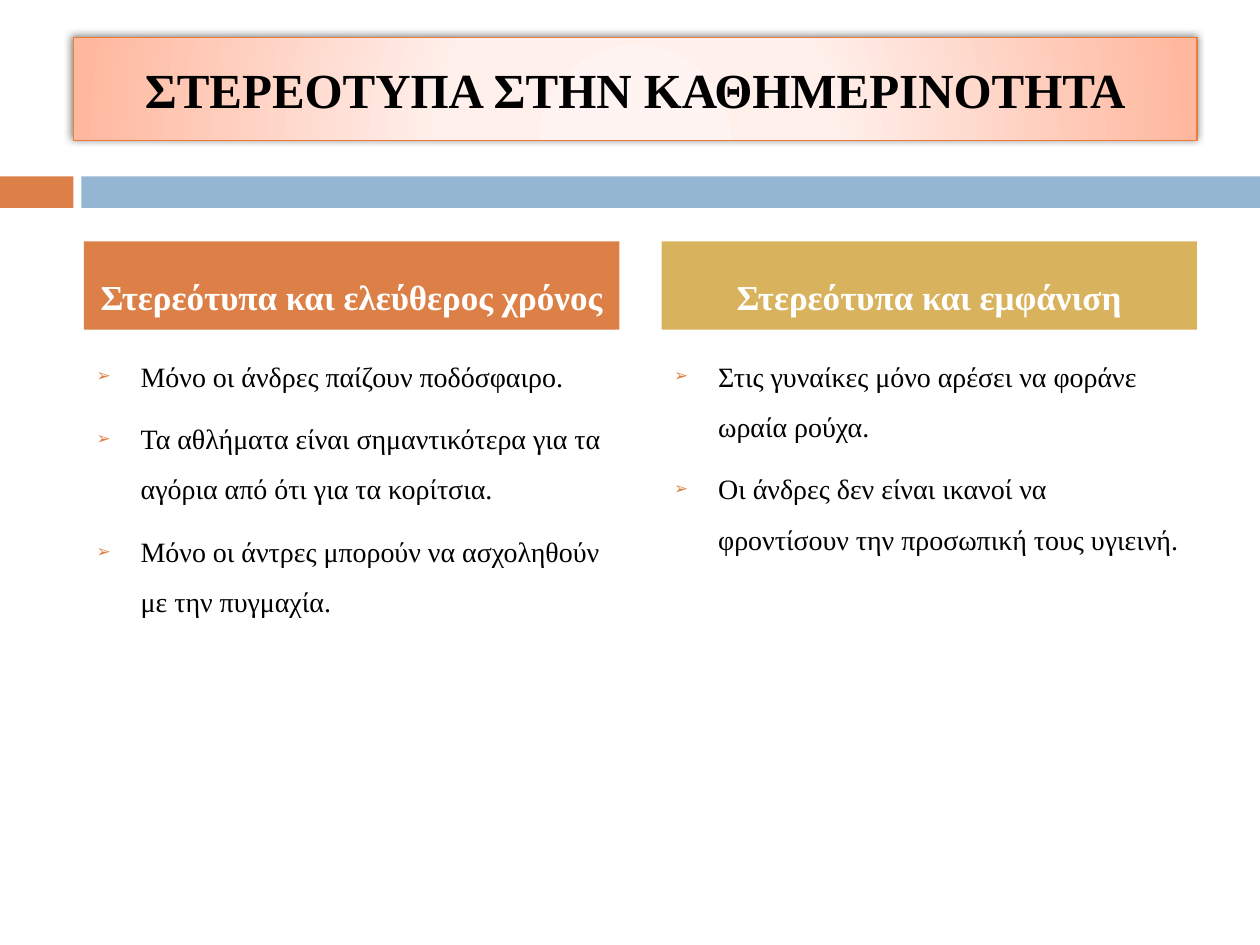
from lxml import etree as et
from pptx import Presentation
from pptx import util as u
from pptx.dml import color as c
from pptx.enum import shapes, text
from pptx.oxml import ns

Pt = u.Pt
hues = {
    "rust": "DD8047", "blue": "94B6D2", "gold": "D8B25C", "edge": "EC7C38",
    "pale": "FFF4F1", "blush": "FFF0EC", "peach": "FFB79D",
    "black": "000000", "white": "FFFFFF",
}


def add(node, xml):
    start, rest = xml.split(" ", 1)
    node.append(et.fromstring(f'{start} xmlns:a="{ns.nsdecls("a").split(chr(34))[1]}" {rest}'))


def write(para, words, size, hue, bold=False):
    run = para.add_run()
    run.text = words
    font = run.font
    font.name, font.size, font.bold = "Times New Roman", Pt(size), bold
    font.color.rgb = c.RGBColor.from_string(hues[hue])


deck = Presentation()
deck.slide_width, deck.slide_height = Pt(720), Pt(540)
slide = deck.slides.add_slide(deck.slide_layouts[4])
title, *parts = slide.placeholders

for left, width, hue in [(0, 42, "rust"), (46.5, 673.5, "blue")]:
    bar = slide.shapes.add_shape(
        shapes.MSO_SHAPE.RECTANGLE, Pt(left), Pt(100.8), Pt(width), Pt(18))
    bar.shadow.inherit = False
    bar.fill.solid()
    bar.fill.fore_color.rgb = c.RGBColor.from_string(hues[hue])
    bar.line.fill.background()

title.left, title.top, title.width, title.height = Pt(42), Pt(21.5), Pt(642), Pt(59)
stops = "".join(
    f'<a:gs pos="{pos * 1000}"><a:srgbClr val="{hues[hue]}"/></a:gs>'
    for pos, hue in [(0, "pale"), (34, "blush"), (100, "peach")])
add(title.element.spPr, f'<a:gradFill rotWithShape="1"><a:gsLst>{stops}</a:gsLst>'
    '<a:path path="circle"><a:fillToRect l="50000" t="155000" r="50000" b="-55000"/>'
    '</a:path></a:gradFill>')
title.line.color.rgb = c.RGBColor.from_string(hues["edge"])
title.line.width = Pt(0.75)
add(title.element.spPr, f'<a:effectLst ><a:outerShdw blurRad="{Pt(5)}" dist="{Pt(2)}" '
    f'dir="{245 * 60000}" algn="tl" rotWithShape="0"><a:srgbClr val="{hues["black"]}">'
    '<a:alpha val="50000"/></a:srgbClr></a:outerShdw></a:effectLst>')
frame = title.text_frame
frame.auto_size = text.MSO_AUTO_SIZE.NONE
frame.vertical_anchor = text.MSO_ANCHOR.MIDDLE
frame.paragraphs[0].alignment = text.PP_ALIGN.CENTER
write(frame.paragraphs[0], "ΣΤΕΡΕΟΤΥΠΑ ΣΤΗΝ ΚΑΘΗΜΕΡΙΝΟΤΗΤΑ", 28, "black", True)

topics = [
    ("rust", "Στερεότυπα και ελεύθερος χρόνος", [
        "Μόνο οι άνδρες παίζουν ποδόσφαιρο.",
        "Τα αθλήματα είναι σημαντικότερα για τα αγόρια από ότι για τα κορίτσια.",
        "Μόνο οι άντρες μπορούν να ασχοληθούν με την πυγμαχία.",
    ]),
    ("gold", "Στερεότυπα και εμφάνιση", [
        "Στις γυναίκες μόνο αρέσει να φοράνε ωραία ρούχα.",
        "Οι άνδρες δεν είναι ικανοί να φροντίσουν την προσωπική τους υγιεινή.",
    ]),
]

for col, (hue, topic, points) in enumerate(topics):
    head, body = parts[2 * col:2 * col + 2]
    for box, top, height in [(head, 138, 50.4), (body, 192, 282)]:
        box.left, box.top, box.width, box.height = Pt(48 + 330 * col), Pt(top), Pt(306), Pt(height)
        box.text_frame.auto_size = text.MSO_AUTO_SIZE.NONE
    head.fill.solid()
    head.fill.fore_color.rgb = c.RGBColor.from_string(hues[hue])
    head.text_frame.vertical_anchor = text.MSO_ANCHOR.MIDDLE
    para = head.text_frame.paragraphs[0]
    para.alignment = text.PP_ALIGN.CENTER
    para.line_spacing, para.space_before = 1.5, Pt(7)
    write(para, topic, 20, "white", True)

    frame = body.text_frame
    for row, point in enumerate(points):
        para = frame.add_paragraph() if row else frame.paragraphs[0]
        para.line_spacing, para.space_before = 1.5, Pt(7)
        props = para._p.get_or_add_pPr()
        props.set("marL", str(Pt(25.2)))
        props.set("indent", str(-Pt(25.2)))
        add(props, f'<a:buClr ><a:srgbClr val="{hues["rust"]}"/></a:buClr>')
        add(props, '<a:buSzPct val="60000"/>')
        add(props, '<a:buChar char="➢"/>')
        write(para, point, 16, "black")

deck.save("out.pptx")
